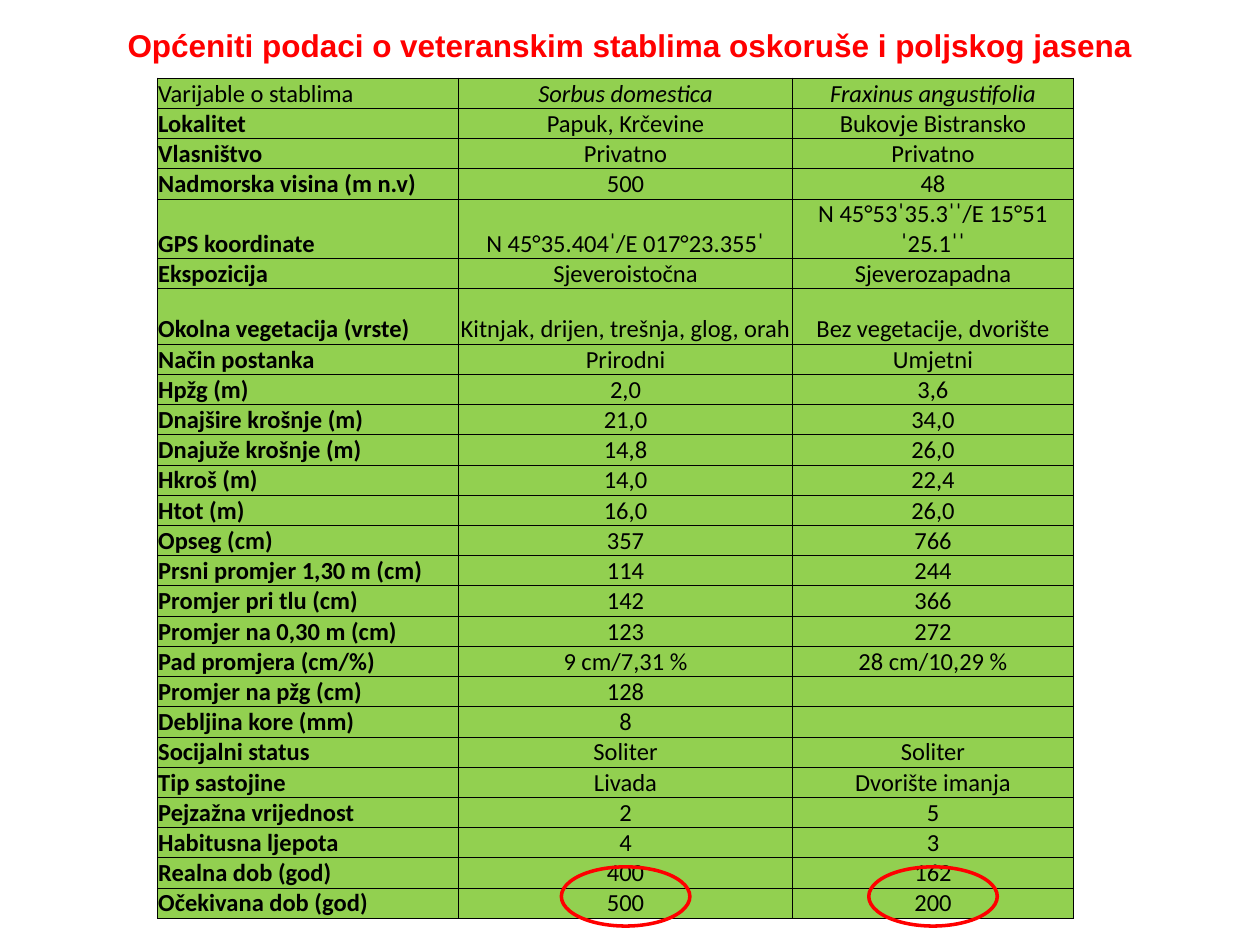
from lxml.etree import SubElement
from pptx import Presentation
from pptx.dml.color import RGBColor
from pptx.enum.shapes import MSO_SHAPE
from pptx.enum.text import MSO_ANCHOR, MSO_AUTO_SIZE, PP_ALIGN
from pptx.oxml.ns import qn
from pptx.util import Inches, Pt

SLIDE_WIDTH, SLIDE_HEIGHT = 10, 7.5
TABLE_LEFT, TABLE_TOP = 1.25, 0.62
COLUMN_WIDTHS = [2.39, 2.65, 2.23]
ROW_HEIGHT, TALL_ROW_HEIGHT = 0.24, 0.44
TALL_ROWS = {"GPS koordinate", "Okolna vegetacija (vrste)"}
RED, GREEN, BLACK = "FF0000", "92D050", "000000"
TITLE = "Općeniti podaci o veteranskim stablima oskoruše i poljskog jasena"
ROWS = [
    ("Varijable o stablima", "Sorbus domestica", "Fraxinus angustifolia"),
    ("Lokalitet", "Papuk, Krčevine", "Bukovje Bistransko"),
    ("Vlasništvo", "Privatno", "Privatno"),
    ("Nadmorska visina (m n.v)", "500", "48"),
    ("GPS koordinate", "N 45°35.404ˈ/E 017°23.355ˈ", "N 45°53ˈ35.3ˈˈ/E 15°51ˈ25.1ˈˈ"),
    ("Ekspozicija", "Sjeveroistočna", "Sjeverozapadna"),
    ("Okolna vegetacija (vrste)", "Kitnjak, drijen, trešnja, glog, orah", "Bez vegetacije, dvorište"),
    ("Način postanka", "Prirodni", "Umjetni"),
    ("Hpžg (m)", "2,0", "3,6"),
    ("Dnajšire krošnje (m)", "21,0", "34,0"),
    ("Dnajuže krošnje (m)", "14,8", "26,0"),
    ("Hkroš (m)", "14,0", "22,4"),
    ("Htot (m)", "16,0", "26,0"),
    ("Opseg (cm)", "357", "766"),
    ("Prsni promjer 1,30 m (cm)", "114", "244"),
    ("Promjer pri tlu (cm)", "142", "366"),
    ("Promjer na 0,30 m (cm)", "123", "272"),
    ("Pad promjera (cm/%)", "9 cm/7,31 %", "28 cm/10,29 %"),
    ("Promjer na pžg (cm)", "128", ""),
    ("Debljina kore (mm)", "8", ""),
    ("Socijalni status", "Soliter", "Soliter"),
    ("Tip sastojine", "Livada", "Dvorište imanja"),
    ("Pejzažna vrijednost", "2", "5"),
    ("Habitusna ljepota", "4", "3"),
    ("Realna dob (god)", "400", "162"),
    ("Očekivana dob (god)", "500", "200"),
]


def color(hex_code):
    """Turn a hex string into a colour."""
    return RGBColor.from_string(hex_code)


def style_paragraph(paragraph, font_name, size, hex_code, bold=False, italic=False, align=PP_ALIGN.CENTER):
    """Set the alignment and font of a whole paragraph."""
    paragraph.alignment = align
    font = paragraph.font
    font.name, font.size = font_name, Pt(size)
    font.bold, font.italic = bold, italic
    font.color.rgb = color(hex_code)


def add_title(slide):
    """Add the centred title across the slide."""
    box = slide.shapes.add_textbox(0, Inches(0.16), Inches(SLIDE_WIDTH), Inches(0.4))
    frame = box.text_frame
    frame.word_wrap = True
    frame.auto_size = MSO_AUTO_SIZE.SHAPE_TO_FIT_TEXT
    frame.text = TITLE
    style_paragraph(frame.paragraphs[0], "Arial", 18, RED, bold=True)


def set_borders(cell, hex_code, points):
    """Draw the same line on all four sides of a cell."""
    properties = cell._tc.get_or_add_tcPr()
    for index, side in enumerate(("a:lnL", "a:lnR", "a:lnT", "a:lnB")):
        line = properties.makeelement(qn(side), {"w": str(Pt(points))})
        SubElement(SubElement(line, qn("a:solidFill")), qn("a:srgbClr"), val=hex_code)
        properties.insert(index, line)


def fill_cell(cell, text, row, column):
    """Write and style one table cell."""
    cell.text = text
    cell.vertical_anchor = MSO_ANCHOR.BOTTOM
    cell.margin_left = cell.margin_right = cell.margin_top = Pt(0.4)
    cell.margin_bottom = 0
    cell.fill.solid()
    cell.fill.fore_color.rgb = color(GREEN)
    set_borders(cell, BLACK, 0.5)
    paragraph = cell.text_frame.paragraphs[0]
    is_label, is_header = column == 0, row == 0
    style_paragraph(
        paragraph, "Calibri", 14, BLACK,
        bold=is_label and not is_header,
        italic=is_header and not is_label,
        align=PP_ALIGN.LEFT if is_label else PP_ALIGN.CENTER,
    )
    if not text:
        SubElement(paragraph._p, qn("a:endParaRPr"), sz="1400")


def add_tree_table(slide):
    """Add the table that compares the two trees."""
    heights = [TALL_ROW_HEIGHT if row[0] in TALL_ROWS else ROW_HEIGHT for row in ROWS]
    table = slide.shapes.add_table(
        len(ROWS), len(COLUMN_WIDTHS), Inches(TABLE_LEFT), Inches(TABLE_TOP),
        Inches(sum(COLUMN_WIDTHS)), Inches(sum(heights)),
    ).table
    table.first_row = table.horz_banding = False
    for column, width in zip(table.columns, COLUMN_WIDTHS):
        column.width = Inches(width)
    for row, height in zip(table.rows, heights):
        row.height = Inches(height)
    for row, texts in enumerate(ROWS):
        for column, text in enumerate(texts):
            fill_cell(table.cell(row, column), text, row, column)


def add_age_ring(slide, column):
    """Circle the two ages at the foot of a column."""
    width, height = 1.02, 0.47
    center = TABLE_LEFT + sum(COLUMN_WIDTHS[:column]) + COLUMN_WIDTHS[column] / 2
    ring = slide.shapes.add_shape(
        MSO_SHAPE.OVAL, Inches(center - width / 2), Inches(6.88), Inches(width), Inches(height)
    )
    ring.shadow.inherit = False
    ring.fill.background()
    ring.line.color.rgb = color(RED)
    ring.line.width = Pt(2)


def main():
    """Build and save the slide."""
    presentation = Presentation()
    presentation.slide_width = Inches(SLIDE_WIDTH)
    presentation.slide_height = Inches(SLIDE_HEIGHT)
    slide = presentation.slides.add_slide(presentation.slide_layouts[6])
    add_title(slide)
    add_tree_table(slide)
    for column in (1, 2):
        add_age_ring(slide, column)
    presentation.save("out.pptx")


if __name__ == "__main__":
    main()
